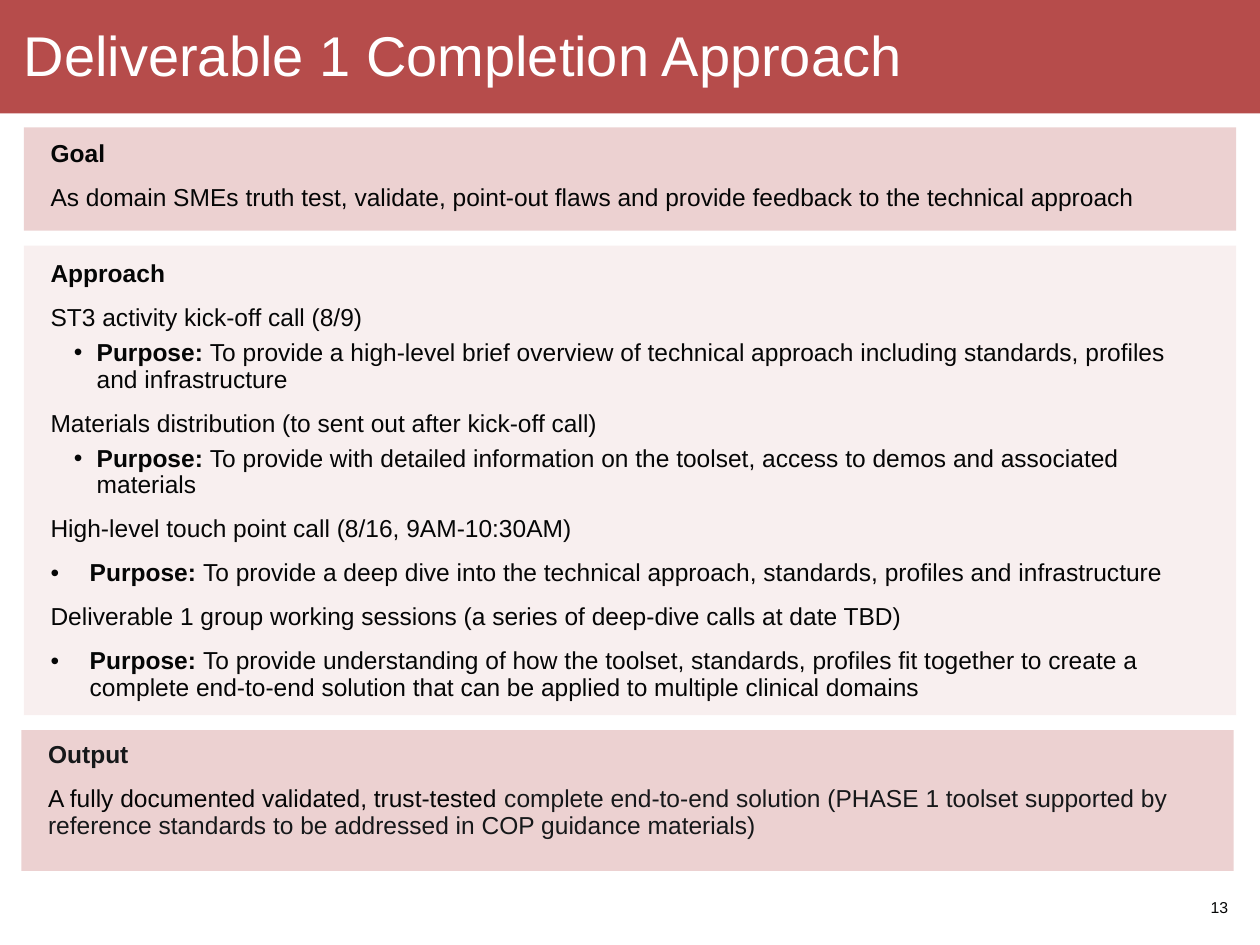
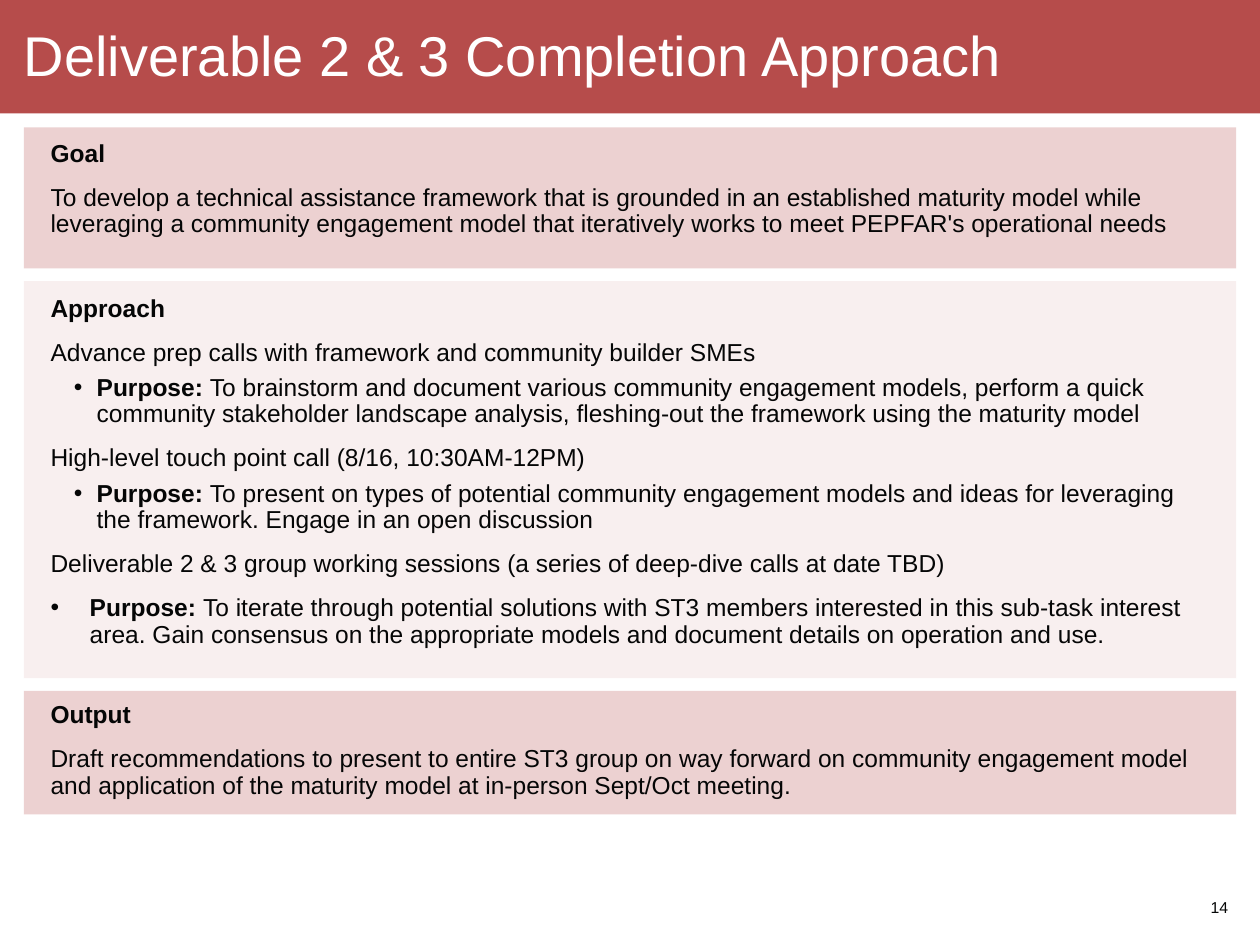
from dataclasses import dataclass

from lxml import etree
from pptx import Presentation
from pptx import util as u
from pptx.dml import color
from pptx.enum import shapes, text
from pptx.oxml import ns


@dataclass(frozen=True)
class Theme:
    font: str = "Arial"
    band: str = "B64C4B"
    strong: str = "D39392"
    soft: str = "F0DAD9"
    ink: str = "050606"
    charcoal: str = "16181A"
    white: str = "FFFFFF"
    opacity: int = 42
    title_size: int = 32
    body_size: int = 14
    number_size: int = 9
    line_spacing: float = 0.9


THEME = Theme()

# Content: a paragraph is (style, text); a text may be a list of (words, colour)
SLIDES = [
    {
        "title": "Deliverable 1 Completion Approach",
        "number": 13,
        "gap": 0.3,
        "panels": [
            {"height": 2.08, "inset": 0.27, "fill": THEME.strong, "lines": [
                ("heading", "Goal"),
                ("body", "As domain SMEs truth test, validate, point-out flaws and "
                         "provide feedback to the technical approach"),
            ]},
            {"height": 9.47, "inset": 0.32, "fill": THEME.soft, "lines": [
                ("heading", "Approach"),
                ("body", "ST3 activity kick-off call (8/9)"),
                ("nested", "To provide a high-level brief overview of technical approach "
                           "including standards, profiles and infrastructure"),
                ("body", "Materials distribution (to sent out after kick-off call)"),
                ("nested", "To provide with detailed information on the toolset, access "
                           "to demos and associated materials"),
                ("body", "High-level touch point call (8/16, 9AM-10:30AM)"),
                ("bullet", "To provide a deep dive into the technical approach, "
                           "standards, profiles and infrastructure"),
                ("body", "Deliverable 1 group working sessions (a series of deep-dive "
                         "calls at date TBD)"),
                ("bullet", "To provide understanding of how the toolset, standards, "
                           "profiles fit together to create a complete end-to-end "
                           "solution that can be applied to multiple clinical domains"),
            ]},
            {"height": 2.84, "inset": 0.25, "shift": -0.05, "fill": THEME.strong, "lines": [
                ("heading", [("Output", THEME.charcoal)]),
                ("body", [
                    ("A fully documented validated, trust-tested ", THEME.ink),
                    ("complete end-to-end solution (PHASE 1 toolset supported by "
                     "reference standards to be addressed in COP guidance materials)",
                     THEME.charcoal),
                ]),
            ]},
        ],
    },
    {
        "title": "Deliverable 2 & 3 Completion Approach",
        "number": 14,
        "gap": 0.26,
        "panels": [
            {"height": 2.84, "inset": 0.27, "fill": THEME.strong, "lines": [
                ("heading", "Goal"),
                ("body", "To develop a technical assistance framework that is grounded in "
                         "an established maturity model while leveraging a community "
                         "engagement model that iteratively works to meet PEPFAR's "
                         "operational needs"),
            ]},
            {"height": 8.0, "inset": 0.3, "fill": THEME.soft, "lines": [
                ("heading", "Approach"),
                ("body", "Advance prep calls with framework and community builder SMEs"),
                ("nested", "To brainstorm and document various community engagement "
                           "models, perform a quick community stakeholder landscape "
                           "analysis, fleshing-out the framework using the maturity model"),
                ("body", "High-level touch point call (8/16, 10:30AM-12PM)"),
                ("nested", "To present on types of potential community engagement models "
                           "and ideas for leveraging the framework. Engage in an open "
                           "discussion"),
                ("body", "Deliverable 2 & 3 group working sessions (a series of deep-dive "
                         "calls at date TBD)"),
                ("bullet", "To iterate through potential solutions with ST3 members "
                           "interested in this sub-task interest area. Gain consensus on "
                           "the appropriate models and document details on operation and "
                           "use."),
            ]},
            {"height": 2.49, "inset": 0.23, "fill": THEME.strong, "lines": [
                ("heading", "Output"),
                ("body", "Draft recommendations to present to entire ST3 group on way "
                         "forward on community engagement model and application of the "
                         "maturity model at in-person Sept/Oct meeting."),
            ]},
        ],
    },
]

# Paragraph formats; bullets add (left margin, hanging indent) in cm
FORMATS = {
    "heading": {"line_spacing": THEME.line_spacing},
    "body": {"line_spacing": THEME.line_spacing, "space_before": u.Pt(10)},
    "nested": {"line_spacing": THEME.line_spacing, "space_before": u.Pt(5), "level": 1},
    "bullet": {"line_spacing": THEME.line_spacing, "space_before": u.Pt(10)},
    "number": {"alignment": text.PP_ALIGN.RIGHT},
}
INDENTS = {"nested": (0.93, 0.46), "bullet": (0.79, 0.79)}
LEAD = "Purpose: "

# Page layout in cm
PAGE_WIDTH, PAGE_HEIGHT = 25.4, 19.05
BAND_HEIGHT = 2.29
MARGIN = 0.48
PANELS_TOP = 2.57
TEXT_PADDING = 0.54


def set_values(target, values):
    for name, value in values.items():
        setattr(target, name, value)


def add_block(page, left, top, width, height, fill, opacity=100):
    block = page.shapes.add_shape(
        shapes.MSO_SHAPE.RECTANGLE, u.Cm(left), u.Cm(top), u.Cm(width), u.Cm(height))
    block.shadow.inherit = False
    block.fill.solid()
    block.fill.fore_color.rgb = color.RGBColor.from_string(fill)
    block.line.fill.background()
    if opacity < 100:
        tint = block.fill._xPr.find(".//" + ns.qn("a:srgbClr"))
        etree.SubElement(tint, ns.qn("a:alpha"), val=str(opacity * 1000))


def add_bullet(para, margin, hanging):
    properties = para._p.get_or_add_pPr()
    properties.set("marL", str(u.Cm(margin)))
    properties.set("indent", str(-u.Cm(hanging)))
    bullet_color = etree.SubElement(properties, ns.qn("a:buClr"))
    etree.SubElement(bullet_color, ns.qn("a:srgbClr"), val=THEME.ink)
    etree.SubElement(properties, ns.qn("a:buFont"), typeface=THEME.font)
    etree.SubElement(properties, ns.qn("a:buChar"), char="•")


def add_span(para, words, size, ink, bold):
    span = para.add_run()
    span.text = words
    set_values(span.font, {"name": THEME.font, "size": u.Pt(size), "bold": bold})
    span.font.color.rgb = color.RGBColor.from_string(ink)


def add_text(page, left, top, width, height, lines, size=THEME.body_size,
             ink=THEME.ink, bold_headings=True, anchor=text.MSO_ANCHOR.TOP):
    box = page.shapes.add_textbox(u.Cm(left), u.Cm(top), u.Cm(width), u.Cm(height))
    frame = box.text_frame
    set_values(frame, {"word_wrap": True, "vertical_anchor": anchor,
                       "margin_left": 0, "margin_right": 0,
                       "margin_top": 0, "margin_bottom": 0})
    for index, (style, content) in enumerate(lines):
        para = frame.add_paragraph() if index else frame.paragraphs[0]
        if style in INDENTS:
            add_bullet(para, *INDENTS[style])
            add_span(para, LEAD, size, ink, True)
        set_values(para, FORMATS[style])
        spans = [(content, ink)] if isinstance(content, str) else content
        for words, span_ink in spans:
            add_span(para, words, size, span_ink, style == "heading" and bold_headings)


def add_frame(page, title, number):
    # Title band and page number
    add_block(page, 0, 0, PAGE_WIDTH, BAND_HEIGHT, THEME.band)
    add_text(page, MARGIN, 0.56, PAGE_WIDTH - 2 * MARGIN, 1.27, [("heading", title)],
             THEME.title_size, THEME.white, bold_headings=False)
    add_text(page, 24.05, 17.78, 0.71, 1.02, [("number", str(number))],
             THEME.number_size, anchor=text.MSO_ANCHOR.MIDDLE)


def add_panels(page, panels, gap):
    # Stacked tinted panels, each with its text
    width = PAGE_WIDTH - 2 * MARGIN
    top = PANELS_TOP
    for panel in panels:
        left, height, inset = MARGIN + panel.get("shift", 0), panel["height"], panel["inset"]
        add_block(page, left, top, width, height, panel["fill"], THEME.opacity)
        add_text(page, left + TEXT_PADDING, top + inset, width - 1.04,
                 height - 2 * inset, panel["lines"])
        top += height + gap


def main():
    deck = Presentation()
    set_values(deck, {"slide_width": u.Cm(PAGE_WIDTH), "slide_height": u.Cm(PAGE_HEIGHT)})
    for content in SLIDES:
        page = deck.slides.add_slide(deck.slide_layouts[6])
        add_frame(page, content["title"], content["number"])
        add_panels(page, content["panels"], content["gap"])
    deck.save("out.pptx")


if __name__ == "__main__":
    main()
